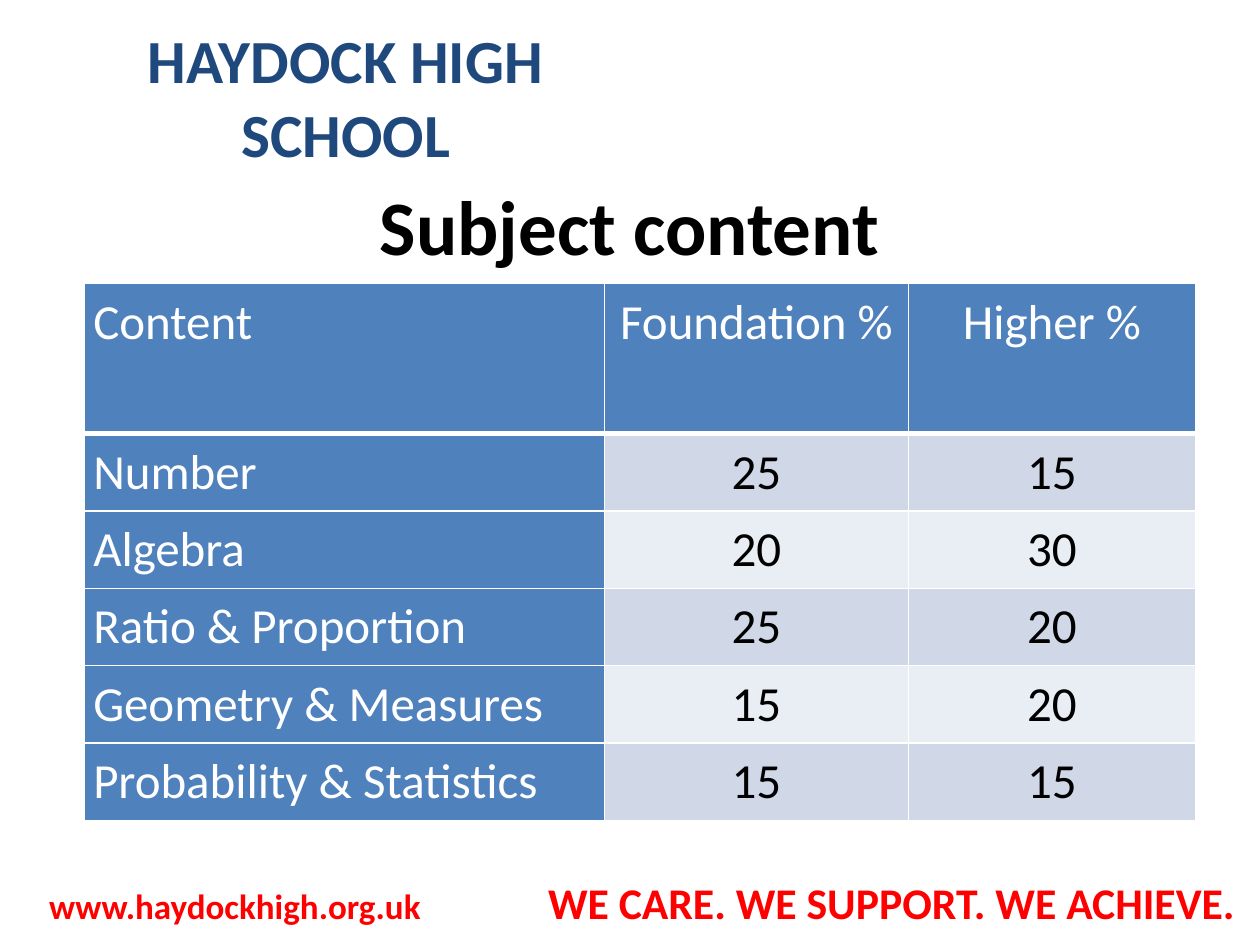
from dataclasses import dataclass

from lxml import etree
from pptx import Presentation
from pptx.dml.color import RGBColor
from pptx.enum.text import MSO_ANCHOR, PP_ALIGN
from pptx.oxml.ns import qn
from pptx.util import Cm, Pt

LEFT, CENTER = PP_ALIGN.LEFT, PP_ALIGN.CENTER
TOP, MIDDLE = MSO_ANCHOR.TOP, MSO_ANCHOR.MIDDLE
TITLE_ONLY = 5


@dataclass(frozen=True)
class Theme:
    font: str = "Calibri"
    navy: str = "1F497D"
    red: str = "FF0000"
    black: str = "000000"
    white: str = "FFFFFF"
    header: str = "4F81BD"
    bands: tuple = ("D0D8E8", "E9EDF4")
    school_size: float = 35
    title_size: float = 44
    table_size: float = 28
    web_size: float = 20
    motto_size: float = 25
    thin_line: float = 1
    header_line: float = 3


class SlideBuilder:
    def __init__(self, slide, theme):
        self.slide = slide
        self.theme = theme

    def add_words(self, paragraph, text, size, color, bold=True):
        run = paragraph.add_run()
        run.text = text
        formats = {"name": self.theme.font, "size": Pt(size), "bold": bold}
        for attribute, value in formats.items():
            setattr(run.font, attribute, value)
        run.font.color.rgb = RGBColor.from_string(color)

    def place(self, holder, box):
        for attribute, value in zip(("left", "top", "width", "height"), box):
            setattr(holder, attribute, Cm(value))

    def title(self, text, box):
        heading = self.slide.shapes.title
        self.place(heading, box)
        heading.text_frame.vertical_anchor = MIDDLE
        paragraph = heading.text_frame.paragraphs[0]
        paragraph.alignment = CENTER
        self.add_words(paragraph, text, self.theme.title_size, self.theme.black)

    def text(self, parts, box, align, spacing=1.0, tab=None, **frame_formats):
        """Set (text, size, color) parts as one paragraph; tab is a stop in cm."""
        frame = self.slide.shapes.add_textbox(*map(Cm, box)).text_frame
        formats = {"word_wrap": True, "vertical_anchor": MIDDLE, **frame_formats}
        for attribute, value in formats.items():
            setattr(frame, attribute, value)
        paragraph = frame.paragraphs[0]
        if tab is not None:
            stops = etree.SubElement(paragraph._p.get_or_add_pPr(), qn("a:tabLst"))
            etree.SubElement(stops, qn("a:tab"), pos=str(Cm(tab)), algn="l")
        paragraph.alignment = align
        paragraph.line_spacing = spacing
        for part in parts:
            self.add_words(paragraph, *part)

    def borders(self, cell, bottom):
        properties = cell._tc.get_or_add_tcPr()
        thin = self.theme.thin_line
        for side, width in (("L", thin), ("R", thin), ("T", thin), ("B", bottom)):
            line = etree.SubElement(properties, qn(f"a:ln{side}"), w=str(Pt(width)))
            fill = etree.SubElement(line, qn("a:solidFill"))
            etree.SubElement(fill, qn("a:srgbClr"), val=self.theme.white)

    def cell(self, cell, text, fill, color, align, bottom):
        formats = {
            "margin_left": Cm(0.18), "margin_right": Cm(0.18),
            "margin_top": 0, "margin_bottom": 0, "vertical_anchor": TOP,
        }
        for attribute, value in formats.items():
            setattr(cell, attribute, value)
        self.borders(cell, bottom)
        cell.fill.solid()
        cell.fill.fore_color.rgb = RGBColor.from_string(fill)
        paragraph = cell.text_frame.paragraphs[0]
        paragraph.alignment = align
        paragraph.line_spacing = 1.15
        self.add_words(paragraph, text, self.theme.table_size, color, bold=False)

    def table(self, rows, left, top, widths, heights):
        theme = self.theme
        box = (left, top, sum(widths), sum(heights))
        table = self.slide.shapes.add_table(
            len(rows), len(widths), *map(Cm, box)).table
        table.horz_banding = False
        for column, width in zip(table.columns, widths):
            column.width = Cm(width)
        for row, height in zip(table.rows, heights):
            row.height = Cm(height)
        for r, row in enumerate(rows):
            bottom = theme.thin_line if r else theme.header_line
            for c, value in enumerate(row):
                if r == 0 or c == 0:
                    fill, color = theme.header, theme.white
                else:
                    fill, color = theme.bands[(r - 1) % 2], theme.black
                align = CENTER if c else LEFT
                self.cell(table.cell(r, c), str(value), fill, color, align, bottom)


def main():
    theme = Theme()
    deck = Presentation()
    deck.slide_width, deck.slide_height = Cm(25.4), Cm(19.05)
    slide = deck.slides.add_slide(deck.slide_layouts[TITLE_ONLY])
    builder = SlideBuilder(slide, theme)

    builder.text([("HAYDOCK HIGH SCHOOL", theme.school_size, theme.navy)],
                 (1.09, 0.86, 11.76, 2.16), CENTER)
    builder.text(
        [("www.haydockhigh.org.uk\t", theme.web_size, theme.red),
         ("WE CARE. WE SUPPORT. WE ACHIEVE.", theme.motto_size, theme.red)],
        (0.33, 17.73, 24.79, 1.09), LEFT, spacing=0.8, tab=10.06,
        margin_left=Cm(0.66), margin_right=0)
    builder.title("Subject content", (1.9, 3.53, 21.59, 2))

    subjects = [
        ("Content", "Foundation %", "Higher %"),
        ("Number", 25, 15),
        ("Algebra", 20, 30),
        ("Ratio & Proportion", 25, 20),
        ("Geometry & Measures", 15, 20),
        ("Probability & Statistics", 15, 15),
    ]
    heights = [3.02] + [1.56] * (len(subjects) - 1)
    builder.table(subjects, 1.7, 5.72, (10.49, 6.12, 5.79), heights)
    deck.save("out.pptx")


if __name__ == "__main__":
    main()
